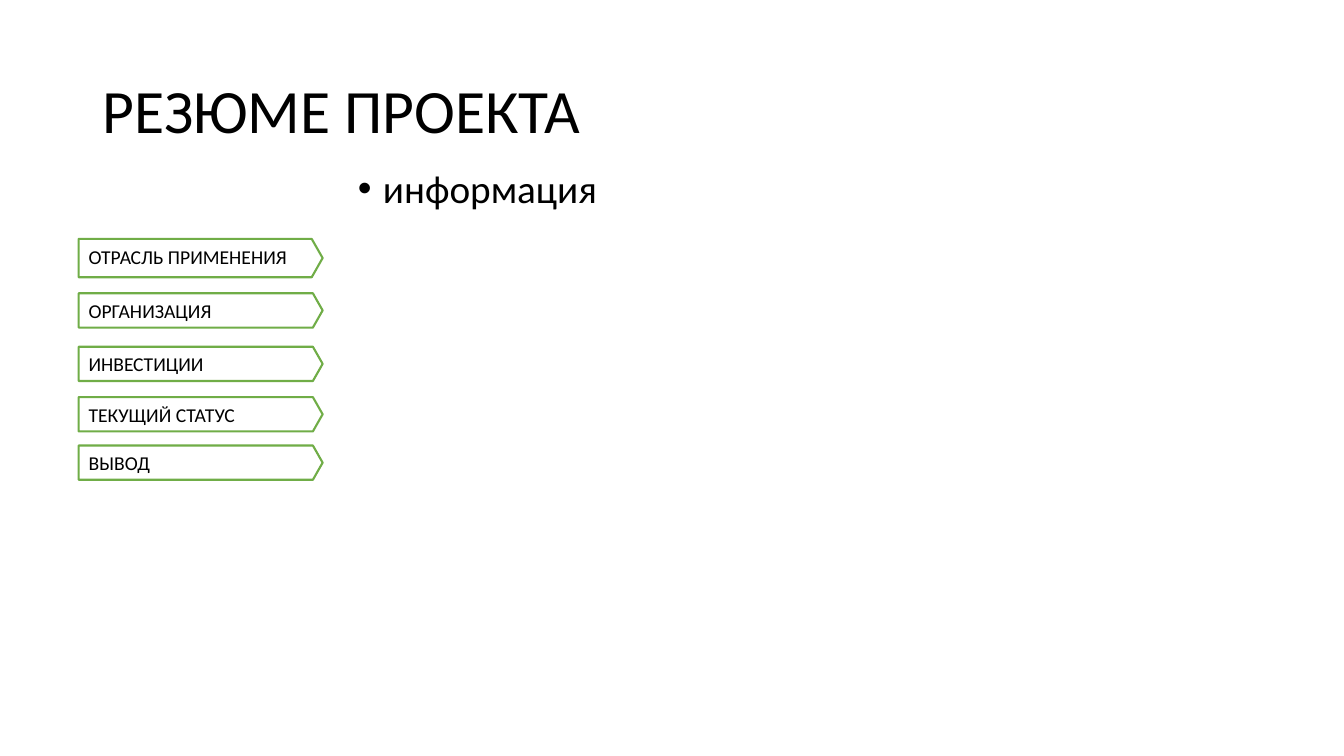
"""Build the project summary slide with a column of topic tags."""
from typing import NamedTuple

from lxml import etree
from pptx import Presentation
from pptx.dml.color import RGBColor
from pptx.enum.shapes import MSO_SHAPE
from pptx.enum.text import MSO_ANCHOR, PP_ALIGN
from pptx.oxml.ns import qn
from pptx.shapes.autoshape import Shape
from pptx.slide import Slide
from pptx.util import Inches, Pt

PLATE = MSO_SHAPE.PENTAGON
MIDDLE, TOP = MSO_ANCHOR.MIDDLE, MSO_ANCHOR.TOP
LEFT = PP_ALIGN.LEFT
FONT, BLACK, GREEN = "Calibri", "000000", "70AD47"


class Tag(NamedTuple):
    text: str
    top: float
    height: float = 0.34
    lead: float = 1.0
    before: float = 0


TAGS = [
    Tag("ОТРАСЛЬ ПРИМЕНЕНИЯ", 2.37, 0.38, 0.9, 10),
    Tag("ОРГАНИЗАЦИЯ", 2.91),
    Tag("ИНВЕСТИЦИИ", 3.44),
    Tag("ТЕКУЩИЙ СТАТУС", 3.94),
    Tag("ВЫВОД", 4.42),
]


def color(code: str) -> RGBColor:
    return RGBColor.from_string(code)


def write(shape: Shape, text: str, *, size: float, anchor: MSO_ANCHOR = MIDDLE,
          lead: float = 0.9, before: float = 0, bullet: str = "") -> None:
    frame = shape.text_frame
    frame.word_wrap = True
    frame.vertical_anchor = anchor
    para = frame.paragraphs[0]
    para.alignment = LEFT
    para.line_spacing = lead
    para.space_before = Pt(before)
    run = para.add_run()
    run.text = text
    run.font.name = FONT
    run.font.size = Pt(size)
    run.font.color.rgb = color(BLACK)
    if bullet:
        props = para._p.get_or_add_pPr()
        props.set("marL", str(Inches(0.25)))
        props.set("indent", str(Inches(-0.25)))
        etree.SubElement(props, qn("a:buFont")).set("typeface", "Arial")
        etree.SubElement(props, qn("a:buChar")).set("char", bullet)


def add_box(slide: Slide, left: float, top: float, width: float,
            height: float) -> Shape:
    return slide.shapes.add_textbox(
        Inches(left), Inches(top), Inches(width), Inches(height))


def add_tag(slide: Slide, tag: Tag) -> None:
    plate = slide.shapes.add_shape(
        PLATE, Inches(0.78), Inches(tag.top), Inches(2.42), Inches(tag.height))
    plate.adjustments[0] = 0.284
    plate.shadow.inherit = False
    plate.fill.background()
    plate.line.color.rgb = color(GREEN)
    plate.line.width = Pt(1.5)
    write(plate, tag.text, size=14, lead=tag.lead, before=tag.before)


def main() -> None:
    deck = Presentation()
    deck.slide_width, deck.slide_height = Inches(13.33), Inches(7.5)
    slide = deck.slides.add_slide(deck.slide_layouts[6])
    title = add_box(slide, 0.92, 0.4, 11.5, 1.45)
    write(title, "РЕЗЮМЕ ПРОЕКТА", size=44)
    for tag in TAGS:
        add_tag(slide, tag)
    body = add_box(slide, 3.45, 1.63, 9.09, 5.04)
    write(body, "информация", size=28, anchor=TOP, before=10, bullet="•")
    deck.save("out.pptx")


if __name__ == "__main__":
    main()
